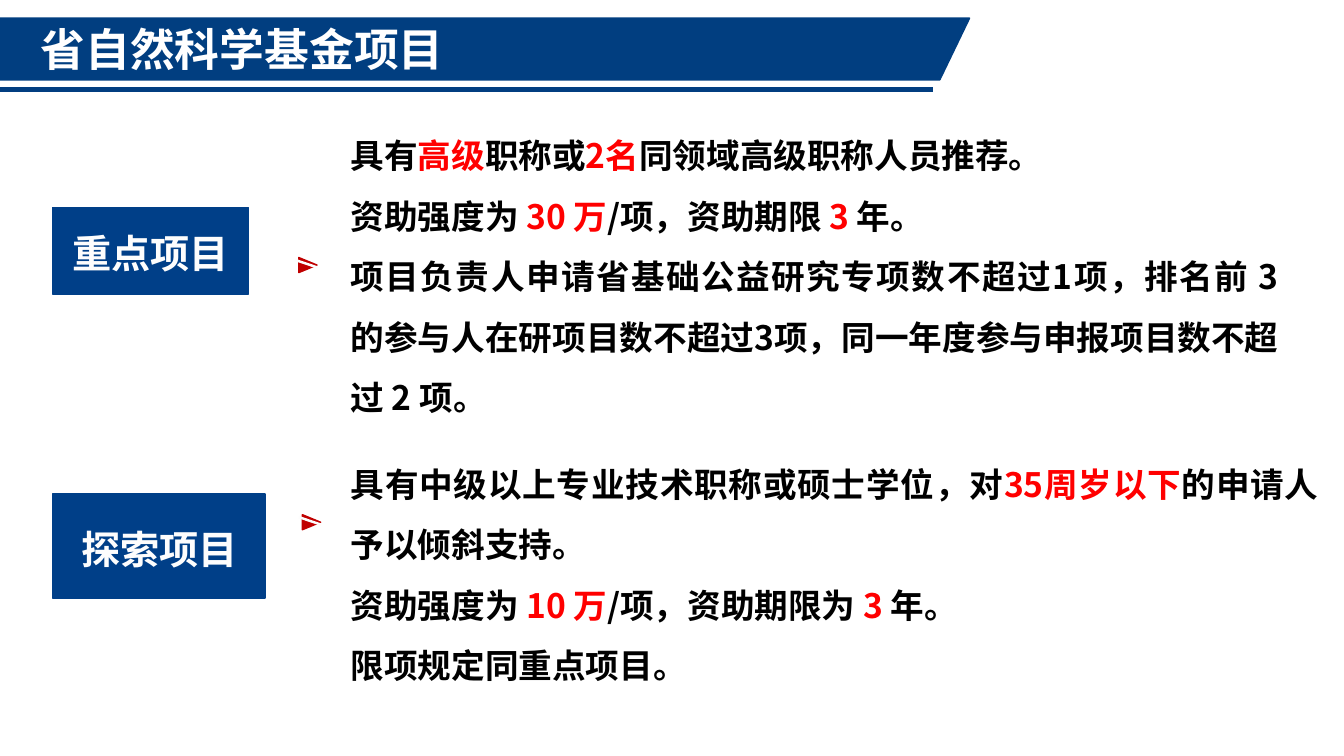
import pptx
import pptx.util
import pptx.dml.color
import pptx.enum.shapes
import pptx.enum.text
import pptx.oxml.ns
import lxml.etree

Cm = pptx.util.Cm
Pt = pptx.util.Pt
SHAPE = pptx.enum.shapes.MSO_SHAPE
ALIGN = pptx.enum.text.PP_ALIGN

FONT = "Noto Sans CJK SC"
BLACK, RED, WHITE, PALE = "000000", "FF0000", "FFFFFF", "FDFDFD"
BANNER_BLUE, LABEL_BLUE, MARKER_RED = "013E80", "003F88", "C00000"

TITLE = "省自然科学基金项目"
PROGRAMMES = [
    {
        "label": "重点项目",
        "panel": (1.32, 5.23, 4.95, 2.18),
        "label_box": (1.57, 5.31, 4.95, 1.65),
        "marker": (7.57, 6.45),
        "details_box": (8.59, 2.77, 23.88, 7.77),
        "details": [
            [("具有", BLACK), ("高级", RED), ("职称或", BLACK), ("2名", RED),
             ("同领域高级职称人员推荐。", BLACK)],
            [("资助强度为 ", BLACK), ("30 万", RED), ("/项，资助期限 ", BLACK),
             ("3 ", RED), ("年。", BLACK)],
            [("项目负责人申请省基础公益研究专项数不超过1项，排名前 3 的参与人在研项目数"
              "不超过3项，同一年度参与申报项目数不超过 2 项。", BLACK)],
        ],
    },
    {
        "label": "探索项目",
        "panel": (1.32, 12.45, 5.36, 2.62),
        "label_box": (1.8, 12.75, 4.98, 1.65),
        "marker": (7.66, 12.93),
        "details_box": (8.59, 11.05, 24.89, 6.22),
        "details": [
            [("具有中级以上专业技术职称或硕士学位，对", BLACK), ("35周岁以下", RED),
             ("的申请人予以倾斜支持。", BLACK)],
            [("资助强度为 ", BLACK), ("10 万", RED), ("/项，资助期限为 ", BLACK),
             ("3 ", RED), ("年。", BLACK)],
            [("限项规定同重点项目。", BLACK)],
        ],
    },
]


def colour(value):
    return pptx.dml.color.RGBColor.from_string(value)


def add_span(para, text, size, value):
    span = para.add_run()
    span.text = text
    span.font.size = Pt(size)
    span.font.bold = True
    span.font.name = FONT
    span.font.color.rgb = colour(value)
    east_asian = lxml.etree.SubElement(span.font._element, pptx.oxml.ns.qn("a:ea"))
    east_asian.set("typeface", FONT)


def add_block(page, place, rows, size, spacing, align):
    box = page.shapes.add_textbox(*map(Cm, place))
    frame = box.text_frame
    frame.word_wrap = True
    frame.auto_size = pptx.enum.text.MSO_AUTO_SIZE.SHAPE_TO_FIT_TEXT
    for index, row in enumerate(rows):
        para = frame.add_paragraph() if index else frame.paragraphs[0]
        para.alignment = align
        para.line_spacing = spacing
        for text, value in row:
            add_span(para, text, size, value)


def add_solid(page, kind, place, value, width):
    shape = page.shapes.add_shape(kind, *map(Cm, place))
    shape.shadow.inherit = False
    shape.fill.solid()
    shape.fill.fore_color.rgb = colour(value)
    shape.line.color.rgb = colour(value)
    shape.line.width = Pt(width)
    return shape


def add_rule(page, ends, value, width):
    rule = page.shapes.add_connector(
        pptx.enum.shapes.MSO_CONNECTOR.STRAIGHT, *map(Cm, ends))
    rule.line.color.rgb = colour(value)
    rule.line.width = Pt(width)
    lxml.etree.SubElement(rule._element.spPr, pptx.oxml.ns.qn("a:effectLst"))


def add_title(page):
    banner = add_solid(page, SHAPE.PARALLELOGRAM, (-0.74, 0.46, 25.17, 1.55),
                       BANNER_BLUE, 1.25)
    banner.adjustments[0] = 0.482
    title = page.shapes.title
    title.left, title.top, title.width, title.height = map(Cm, (0.84, 0.46, 23.27, 1.55))
    frame = title.text_frame
    frame.margin_left = frame.margin_right = Cm(0.18)
    frame.margin_top = frame.margin_bottom = Cm(0.1)
    frame.vertical_anchor = pptx.enum.text.MSO_ANCHOR.MIDDLE
    frame.auto_size = pptx.enum.text.MSO_AUTO_SIZE.NONE
    frame.paragraphs[0].alignment = ALIGN.LEFT
    add_span(frame.paragraphs[0], TITLE, 32, WHITE)
    banner._element.addnext(title._element)
    add_rule(page, (-0.03, 2.26, 23.52, 2.26), BANNER_BLUE, 3.5)


def add_programme(page, programme):
    add_block(page, programme["details_box"], programme["details"], 24, 1.5, ALIGN.JUSTIFY)
    add_solid(page, SHAPE.RECTANGLE, programme["panel"], LABEL_BLUE, 1)
    add_block(page, programme["label_box"], [[(programme["label"], PALE)]], 28, 1.3, ALIGN.LEFT)
    left, top = programme["marker"]
    marker = add_solid(page, SHAPE.ISOSCELES_TRIANGLE, (left, top, 0.38, 0.46), MARKER_RED, 1)
    marker.rotation = 90
    add_rule(page, (left - 0.13, top + 0.1, left + 0.43, top + 0.29), PALE, 1.75)


def main():
    deck = pptx.Presentation()
    deck.slide_width, deck.slide_height = Cm(33.87), Cm(19.05)
    page = deck.slides.add_slide(deck.slide_layouts[5])
    page.background.fill.solid()
    page.background.fill.fore_color.rgb = colour(WHITE)
    add_title(page)
    for programme in PROGRAMMES:
        add_programme(page, programme)
    deck.save("out.pptx")


if __name__ == "__main__":
    main()
